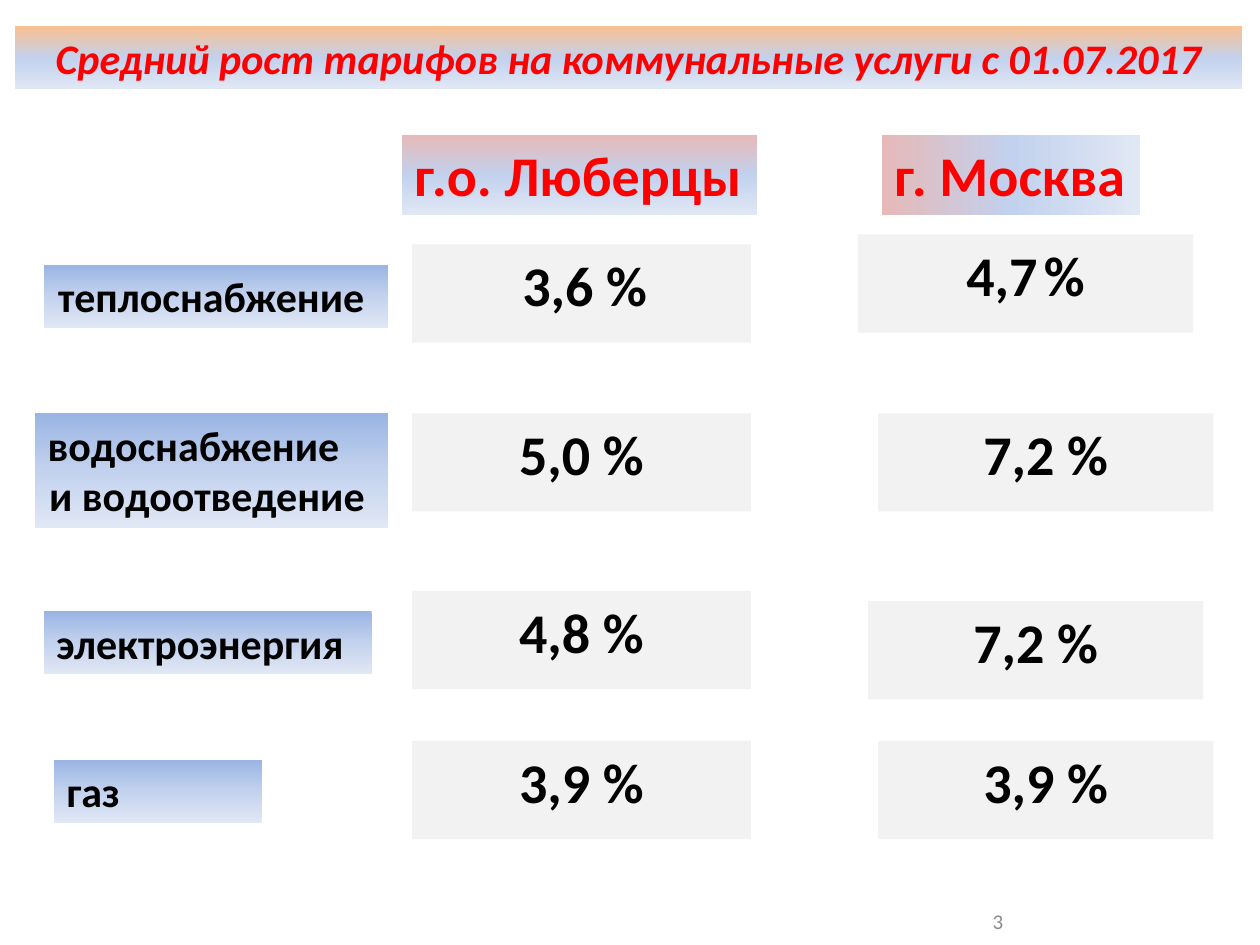
from copy import deepcopy

from pptx import Presentation
from pptx.dml.color import RGBColor
from pptx.enum.shapes import MSO_SHAPE
from pptx.enum.text import MSO_ANCHOR, MSO_AUTO_SIZE, PP_ALIGN
from pptx.oxml.ns import qn
from pptx.util import Inches, Pt

RED = RGBColor(0xFF, 0x00, 0x00)
BLACK = RGBColor(0x00, 0x00, 0x00)
GREY = RGBColor(0x8C, 0x8C, 0x8C)
PALE_GREY = RGBColor(0xF2, 0xF2, 0xF2)
ORANGE = RGBColor(0xFA, 0xC0, 0x90)
PINK = RGBColor(0xE6, 0xB9, 0xB8)
BLUE = RGBColor(0x9A, 0xB5, 0xE4)
LIGHT_BLUE = RGBColor(0xC2, 0xD1, 0xED)
PALE_BLUE = RGBColor(0xE1, 0xE8, 0xF5)

SLIDE_WIDTH, SLIDE_HEIGHT = Inches(10), Inches(7.5)
COLUMN, ROW = SLIDE_WIDTH / 100, SLIDE_HEIGHT / 75
DOWNWARD, RIGHTWARD = 270, 0


def place(shape, box):
    left, top, width, height = box
    shape.left, shape.width = round(left * COLUMN), round(width * COLUMN)
    shape.top, shape.height = round(top * ROW), round(height * ROW)


def fill_gradient(shape, first_color, angle=DOWNWARD):
    shape.fill.gradient()
    shape.fill.gradient_angle = angle
    stop_list = shape._element.spPr.find(qn("a:gradFill")).find(qn("a:gsLst"))
    stop_list.append(deepcopy(stop_list[-1]))
    colors = (first_color, LIGHT_BLUE, PALE_BLUE)
    for stop, position, color in zip(shape.fill.gradient_stops, (0, 0.5, 1), colors):
        stop.position = position
        stop.color.rgb = color


def format_font(font, size, color, bold=True, italic=False):
    font.name = "Calibri"
    font.size = Pt(size)
    font.color.rgb = color
    font.bold = bold
    font.italic = italic


def write(shape, text, size, color, alignments=(PP_ALIGN.LEFT,), wrap=True):
    frame = shape.text_frame
    frame.text = text
    frame.word_wrap = wrap
    frame.vertical_anchor = MSO_ANCHOR.TOP
    for paragraph, alignment in zip(frame.paragraphs, alignments):
        paragraph.alignment = alignment
        for run in paragraph.runs:
            format_font(run.font, size, color)


def add_box(slide, box):
    shape = slide.shapes.add_shape(MSO_SHAPE.RECTANGLE, 0, 0, 0, 0)
    place(shape, box)
    shape.shadow.inherit = False
    shape.line.fill.background()
    return shape


def add_title(slide, box):
    title = slide.shapes.title
    place(title, box)
    fill_gradient(title, ORANGE)
    write(title, "Средний рост тарифов на коммунальные услуги с 01.07.2017",
          24, RED, (PP_ALIGN.CENTER,))
    title.text_frame.auto_size = MSO_AUTO_SIZE.NONE
    title.text_frame.paragraphs[0].runs[0].font.italic = True


def add_heading(slide, box, text, angle):
    heading = add_box(slide, box)
    fill_gradient(heading, PINK, angle)
    write(heading, text, 32, RED, wrap=False)


def add_label(slide, box, text, alignments=(PP_ALIGN.LEFT,)):
    label = add_box(slide, box)
    fill_gradient(label, BLUE)
    write(label, text, 24, BLACK, alignments, wrap=False)


def add_value(slide, box, pieces):
    value = add_box(slide, box)
    value.fill.solid()
    value.fill.fore_color.rgb = PALE_GREY
    write(value, "", 32, BLACK, (PP_ALIGN.CENTER,))
    paragraph = value.text_frame.paragraphs[0]
    for piece in pieces:
        run = paragraph.add_run()
        run.text = piece
        format_font(run.font, 16 if piece == " " else 32, BLACK)


def add_slide_number(slide, box):
    number = slide.shapes.add_textbox(0, 0, 0, 0)
    place(number, box)
    write(number, "3", 12, GREY)
    number.text_frame.vertical_anchor = MSO_ANCHOR.MIDDLE
    number.text_frame.paragraphs[0].runs[0].font.bold = False


def main():
    presentation = Presentation()
    presentation.slide_width, presentation.slide_height = SLIDE_WIDTH, SLIDE_HEIGHT
    slide = presentation.slides.add_slide(presentation.slide_layouts[5])

    add_title(slide, (1.2, 2.1, 97.4, 5))
    add_heading(slide, (31.9, 10.7, 28.2, 6.4), "г.о. Люберцы", DOWNWARD)
    add_heading(slide, (70, 10.7, 20.5, 6.4), "г. Москва", RIGHTWARD)

    left, center = PP_ALIGN.LEFT, PP_ALIGN.CENTER
    labels = [
        ((3.5, 21, 27.3, 5), "теплоснабжение ", (center,)),
        ((2.8, 32.8, 28, 9.1), "водоснабжение\nи водоотведение ", (left, center)),
        ((3.5, 48.5, 26, 5), "электроэнергия", (left,)),
        ((4.3, 60.3, 16.5, 5), "газ", (left,)),
    ]
    for box, text, alignments in labels:
        add_label(slide, box, text, alignments)

    city_values = [
        (19.4, [" ", "3,6 %"]),
        (32.8, ["5,0 %"]),
        (46.9, ["4,8 %"]),
        (58.8, ["3,9 %"]),
    ]
    capital_values = [
        (68.1, 18.6, ["4,7", " ", "%"]),
        (69.7, 32.8, ["7,2 %"]),
        (68.9, 47.7, ["7,2 %"]),
        (69.7, 58.8, ["3,9 %"]),
    ]
    for top, pieces in city_values:
        add_value(slide, (32.7, top, 26.9, 7.8), pieces)
    for start, top, pieces in capital_values:
        add_value(slide, (start, top, 26.6, 7.8), pieces)

    add_slide_number(slide, (77.8, 72.1, 20.8, 2))
    presentation.save("out.pptx")


if __name__ == "__main__":
    main()
